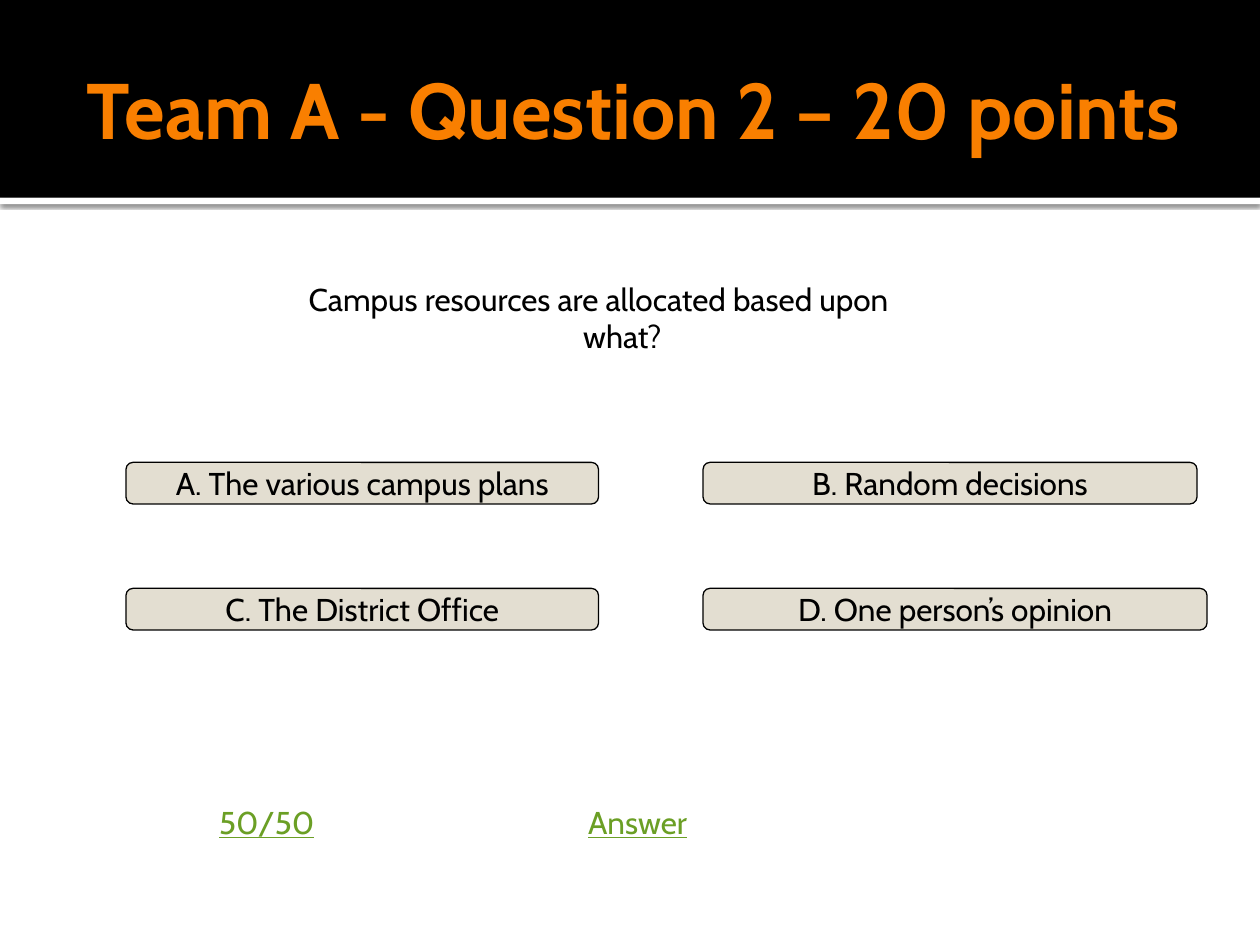
from lxml import etree
from pptx import Presentation, util as u
from pptx.dml.color import RGBColor
from pptx.enum import shapes, text
from pptx.oxml import ns

BLACK = RGBColor(0x00, 0x00, 0x00)
WHITE = RGBColor(0xFF, 0xFF, 0xFF)
ORANGE = RGBColor(0xF9, 0x7F, 0x00)
SAND = RGBColor(0xE3, 0xDE, 0xD1)
GREEN = RGBColor(0x6B, 0x9F, 0x25)

FONT = "Cabin"
WIDTH, HEIGHT = 10, 7.5
BANNER_HEIGHT = 1.57
ANSWER_LEFTS = (1, 5.58)
ANSWER_TOPS = (3.67, 4.67)
ANSWERS = (
    ("A. The various campus plans", 0, 0, 3.75),
    ("B. Random decisions", 1, 0, 3.92),
    ("C. The District Office", 0, 1, 3.75),
    ("D. One person’s opinion", 1, 1, 4),
)
LIFELINES = ("50/50", "Answer")


def inches(*lengths):
    return [u.Inches(length) for length in lengths]


def write(frame, words, size=18, color=BLACK, bold=False, underline=False,
          margin=0, indent=0):
    paragraph = frame.paragraphs[0]
    paragraph.alignment = text.PP_ALIGN.CENTER
    if margin:
        properties = paragraph._p.get_or_add_pPr()
        properties.set("marL", str(u.Inches(margin)))
        properties.set("indent", str(u.Inches(indent)))
    run = paragraph.add_run()
    run.text = words
    run.font.name = FONT
    run.font.size = u.Pt(size)
    run.font.bold = bold
    run.font.underline = underline
    run.font.color.rgb = color


def add_band(slide, top, height, color):
    band = slide.shapes.add_shape(
        shapes.MSO_SHAPE.RECTANGLE, *inches(0, top, WIDTH, height))
    band.shadow.inherit = False
    band.fill.solid()
    band.fill.fore_color.rgb = color
    band.line.fill.background()
    return band


def cast_shadow(band):
    effects = band._element.spPr.find(ns.qn("a:effectLst"))
    shadow = etree.SubElement(
        effects, ns.qn("a:outerShdw"), blurRad=str(u.Pt(2.5)),
        dist=str(u.Pt(0.8)), dir="5400000", algn="tl", rotWithShape="0")
    tint = etree.SubElement(shadow, ns.qn("a:srgbClr"), val=str(BLACK))
    etree.SubElement(tint, ns.qn("a:alpha"), val="60000")


def add_text(slide, place, words, anchor=text.MSO_ANCHOR.TOP, **style):
    frame = slide.shapes.add_textbox(*inches(*place)).text_frame
    frame.word_wrap = True
    frame.vertical_anchor = anchor
    write(frame, words, **style)
    return frame


def add_answer(slide, words, column, row, width):
    button = slide.shapes.add_shape(
        shapes.MSO_SHAPE.ROUNDED_RECTANGLE,
        *inches(ANSWER_LEFTS[column], ANSWER_TOPS[row], width, 0.33))
    button.shadow.inherit = False
    button.fill.solid()
    button.fill.fore_color.rgb = SAND
    button.line.color.rgb = BLACK
    button.line.width = u.Pt(0.75)
    button.text_frame.word_wrap = False
    button.text_frame.vertical_anchor = text.MSO_ANCHOR.MIDDLE
    write(button.text_frame, words)


def add_lifelines(slide):
    table = slide.shapes.add_table(
        1, 3, *inches(0.58, 6.33, 8.83, 0.58)).table
    table.first_row = False
    table.horz_banding = False
    for cell in table.iter_cells():
        cell.fill.background()
    for column, words in enumerate(LIFELINES):
        write(table.cell(0, column).text_frame, words, color=GREEN,
              underline=True, margin=0.13)


def main():
    deck = Presentation()
    deck.slide_width, deck.slide_height = inches(WIDTH, HEIGHT)
    slide = deck.slides.add_slide(deck.slide_layouts[6])

    cast_shadow(add_band(slide, BANNER_HEIGHT, 0.05, WHITE))
    add_band(slide, 0, BANNER_HEIGHT, BLACK)
    title = add_text(slide, (0.5, 0.17, 9, 1.37),
                     "Team A - Question 2 – 20 points",
                     anchor=text.MSO_ANCHOR.MIDDLE,
                     size=45, color=ORANGE, bold=True)
    title.margin_right = u.Inches(0.05)
    add_text(slide, (2.25, 2.17, 5, 0.7),
             "Campus resources are allocated based upon what?",
             margin=0.38, indent=-0.38)
    for answer in ANSWERS:
        add_answer(slide, *answer)
    add_lifelines(slide)

    deck.save("out.pptx")


if __name__ == "__main__":
    main()
